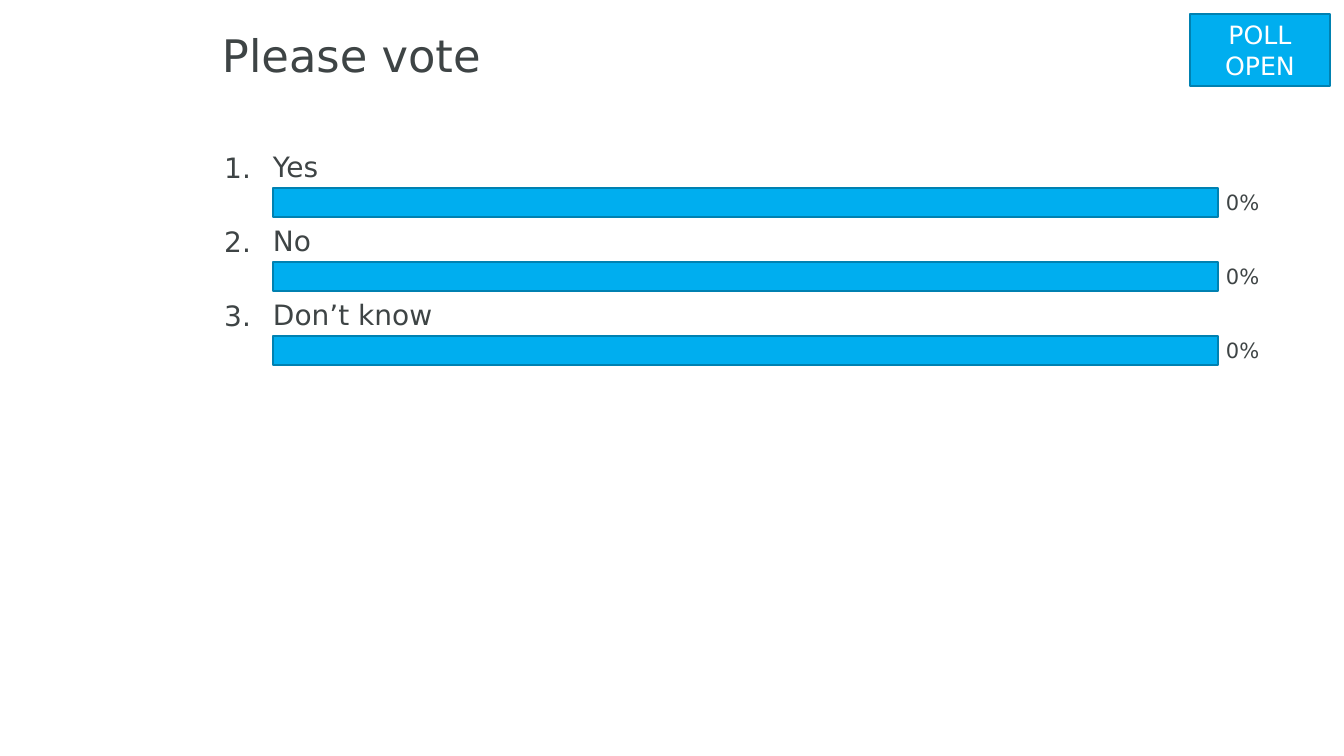
from dataclasses import dataclass

from pptx import Presentation
from pptx.dml.color import RGBColor
from pptx.enum.shapes import MSO_SHAPE
from pptx.enum.text import MSO_ANCHOR, MSO_AUTO_SIZE, PP_ALIGN
from pptx.shapes.autoshape import Shape
from pptx.slide import Slide
from pptx.util import Emu, Pt

FONT = "DejaVu Sans"
INK = "3E4445"
BLUE = "00AEEF"
BLUE_EDGE = "0081B1"
WHITE = "FFFFFF"

LIST_TOP = 144
ROW_PITCH = 74


@dataclass(frozen=True)
class Box:
    left: int
    top: int
    width: int
    height: int


@dataclass(frozen=True)
class Insets:
    left: int = 10
    top: int = 5
    right: int = 10
    bottom: int = 5


@dataclass(frozen=True)
class Answer:
    label: str
    share: str


ANSWERS = [Answer("Yes", "0%"), Answer("No", "0%"), Answer("Don’t know", "0%")]


def px(length: int) -> Emu:
    return Emu(round(length * 914400 / 100.8))


def colour(value: str) -> RGBColor:
    return RGBColor.from_string(value)


def bounds(box: Box) -> tuple[Emu, Emu, Emu, Emu]:
    return px(box.left), px(box.top), px(box.width), px(box.height)


def write(shape: Shape, text: str, size: int, ink: str = INK,
          insets: Insets = Insets(), align: PP_ALIGN = PP_ALIGN.LEFT,
          anchor: MSO_ANCHOR = MSO_ANCHOR.TOP, line_spacing: float = 1.0) -> None:
    frame = shape.text_frame
    frame.word_wrap = True
    frame.auto_size = MSO_AUTO_SIZE.NONE
    frame.vertical_anchor = anchor
    frame.margin_left, frame.margin_top = px(insets.left), px(insets.top)
    frame.margin_right, frame.margin_bottom = px(insets.right), px(insets.bottom)
    paragraph = frame.paragraphs[0]
    paragraph.alignment = align
    paragraph.line_spacing = line_spacing
    run = paragraph.add_run()
    run.text = text
    run.font.name = FONT
    run.font.size = Pt(size)
    run.font.color.rgb = colour(ink)


def add_label(slide: Slide, box: Box, text: str, size: int, insets: Insets,
              align: PP_ALIGN = PP_ALIGN.LEFT) -> None:
    write(slide.shapes.add_textbox(*bounds(box)), text, size, insets=insets, align=align)


def add_panel(slide: Slide, box: Box) -> Shape:
    panel = slide.shapes.add_shape(MSO_SHAPE.RECTANGLE, *bounds(box))
    panel.shadow.inherit = False
    panel.fill.solid()
    panel.fill.fore_color.rgb = colour(BLUE)
    panel.line.color.rgb = colour(BLUE_EDGE)
    panel.line.width = Pt(1)
    return panel


def add_answer(slide: Slide, number: int, answer: Answer) -> None:
    top = LIST_TOP + (number - 1) * ROW_PITCH
    add_label(slide, Box(212, top, 61, 39), f"{number}.", 20,
              Insets(0, 6, 22, 0), PP_ALIGN.RIGHT)
    add_label(slide, Box(273, top, 1016, 42), answer.label, 20, Insets(0, 6, 0, 3))
    add_label(slide, Box(1218, top + 46, 72, 25), answer.share, 15, Insets(8, 0, 0, 0))
    add_panel(slide, Box(273, top + 44, 945, 29))


def main() -> None:
    presentation = Presentation()
    presentation.slide_width, presentation.slide_height = px(1344), px(756)
    slide = presentation.slides.add_slide(presentation.slide_layouts[5])

    # Question
    question = slide.shapes.title
    question.left, question.top, question.width, question.height = bounds(
        Box(212, 29, 960, 107))
    write(question, "Please vote", 32, line_spacing=0.9)

    # Answers with their result bars
    for number, answer in enumerate(ANSWERS, start=1):
        add_answer(slide, number, answer)

    # Poll status
    poll_status = add_panel(slide, Box(1190, 14, 140, 72))
    write(poll_status, "POLL OPEN", 18, WHITE,
          align=PP_ALIGN.CENTER, anchor=MSO_ANCHOR.MIDDLE)

    presentation.save("out.pptx")


if __name__ == "__main__":
    main()
